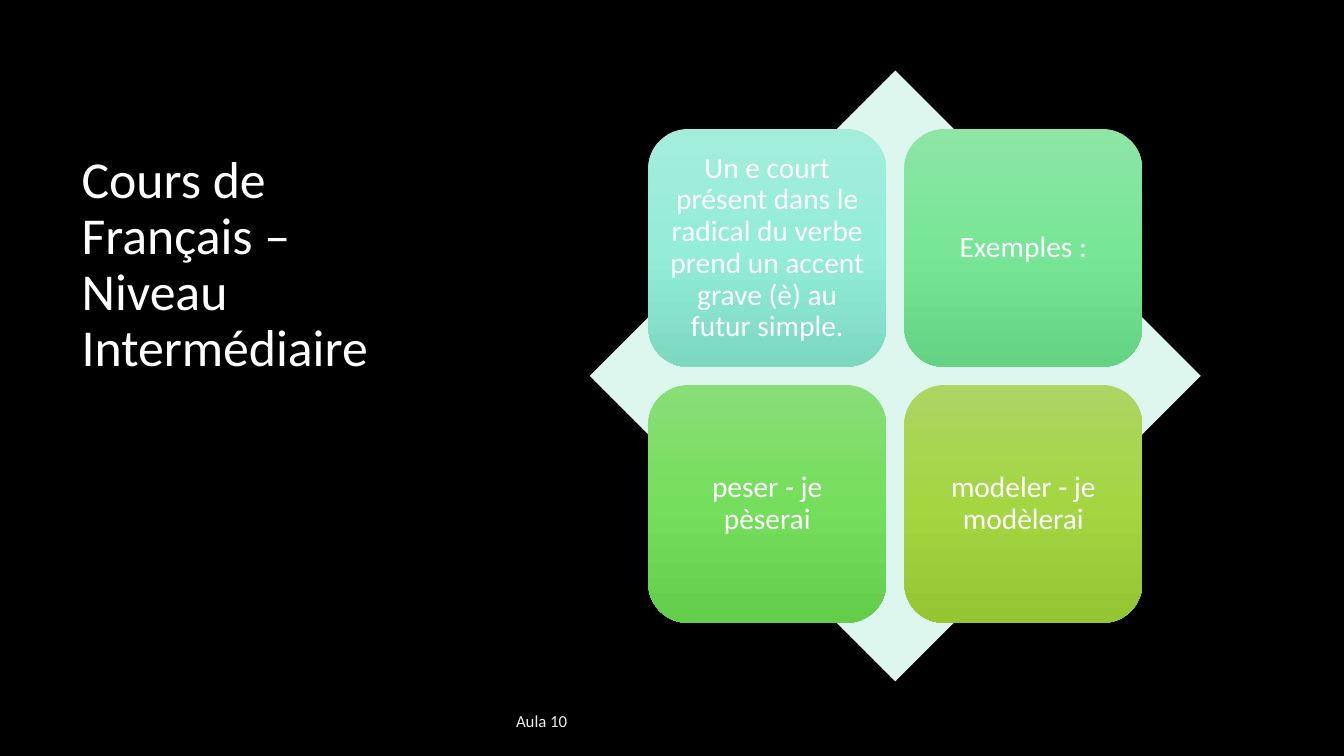
import pptx
import pptx.dml.color
import pptx.enum.shapes
import pptx.enum.text
import pptx.oxml
import pptx.oxml.ns
import pptx.util
from pptx.util import Inches

FONT = "Calibri"
COLOURS = {
    "background": "000000",
    "text": "FFFFFF",
    "footer": "EDEDED",
    "diamond": "DDF7EF",
}
# Text and top, middle and bottom gradient colours, row by row
CARDS = [
    ("Un e court présent dans le radical du verbe prend un accent grave (è) au futur simple.",
     ("A4EDDB", "93EDD7", "7DD8C2")),
    ("Exemples :", ("8DE6A5", "77E697", "64D383")),
    ("peser - je pèserai", ("89DE77", "75DE5C", "64CD4B")),
    ("modeler - je modèlerai", ("ACD564", "A4D642", "94C533")),
]
CARD_LEFT, CARD_TOP, CARD_SIZE, CARD_STEP = 6.43, 1.28, 2.36, 2.54


def rgb(value):
    return pptx.dml.color.RGBColor.from_string(value)


def write_text(shape, text, size, colour, alignment, anchor, line_spacing=1.0):
    frame = shape.text_frame
    frame.word_wrap = True
    frame.auto_size = pptx.enum.text.MSO_AUTO_SIZE.NONE
    frame.vertical_anchor = anchor
    paragraph = frame.paragraphs[0]
    paragraph.alignment = alignment
    paragraph.line_spacing = line_spacing
    run = paragraph.add_run()
    run.text = text
    run.font.name = FONT
    run.font.size = pptx.util.Pt(size)
    run.font.color.rgb = rgb(colour)


def fill_gradient(shape, colours):
    """Fill the shape with evenly spaced colours running from top to bottom."""
    shape.fill.gradient()
    shape.fill.gradient_angle = 270
    stops = shape._element.spPr.find(".//" + pptx.oxml.ns.qn("a:gsLst"))
    for stop in list(stops):
        stops.remove(stop)
    for index, colour in enumerate(colours):
        position = index * 100000 // (len(colours) - 1)
        stops.append(pptx.oxml.parse_xml(
            f'<a:gs {pptx.oxml.ns.nsdecls("a")} pos="{position}">'
            f'<a:srgbClr val="{colour}"/></a:gs>'))


def add_plain_shape(slide, kind, left, top, size):
    shape = slide.shapes.add_shape(
        kind, Inches(left), Inches(top), Inches(size), Inches(size))
    shape.shadow.inherit = False
    shape.line.fill.background()
    return shape


def add_title(slide):
    title = slide.shapes.title
    title.left, title.top = Inches(0.71), Inches(1.48)
    title.width, title.height = Inches(3.21), Inches(4.87)
    write_text(title, "Cours de Français – Niveau Intermédiaire", 37, COLOURS["text"],
               pptx.enum.text.PP_ALIGN.LEFT, pptx.enum.text.MSO_ANCHOR.TOP, 0.9)


def add_footer(slide):
    footer = slide.shapes.add_textbox(Inches(5.02), Inches(6.95), Inches(3.83), Inches(0.4))
    write_text(footer, "Aula 10", 12, COLOURS["footer"],
               pptx.enum.text.PP_ALIGN.LEFT, pptx.enum.text.MSO_ANCHOR.MIDDLE)


def add_diamond(slide):
    diamond = add_plain_shape(slide, pptx.enum.shapes.MSO_SHAPE.DIAMOND, 5.85, 0.7, 6.06)
    diamond.fill.solid()
    diamond.fill.fore_color.rgb = rgb(COLOURS["diamond"])


def add_card(slide, index, text, colours):
    row, column = divmod(index, 2)
    card = add_plain_shape(
        slide, pptx.enum.shapes.MSO_SHAPE.ROUNDED_RECTANGLE,
        CARD_LEFT + column * CARD_STEP, CARD_TOP + row * CARD_STEP, CARD_SIZE)
    fill_gradient(card, colours)
    frame = card.text_frame
    frame.margin_left = frame.margin_right = Inches(0.09)
    frame.margin_top = frame.margin_bottom = Inches(0.09)
    write_text(card, text, 21, COLOURS["text"],
               pptx.enum.text.PP_ALIGN.CENTER, pptx.enum.text.MSO_ANCHOR.MIDDLE, 0.9)


def main():
    presentation = pptx.Presentation()
    presentation.slide_width = Inches(13.33)
    presentation.slide_height = Inches(7.5)
    slide = presentation.slides.add_slide(presentation.slide_layouts[5])
    slide.background.fill.solid()
    slide.background.fill.fore_color.rgb = rgb(COLOURS["background"])

    add_title(slide)
    add_footer(slide)
    add_diamond(slide)
    for index, (text, colours) in enumerate(CARDS):
        add_card(slide, index, text, colours)
    presentation.save("out.pptx")


if __name__ == "__main__":
    main()
